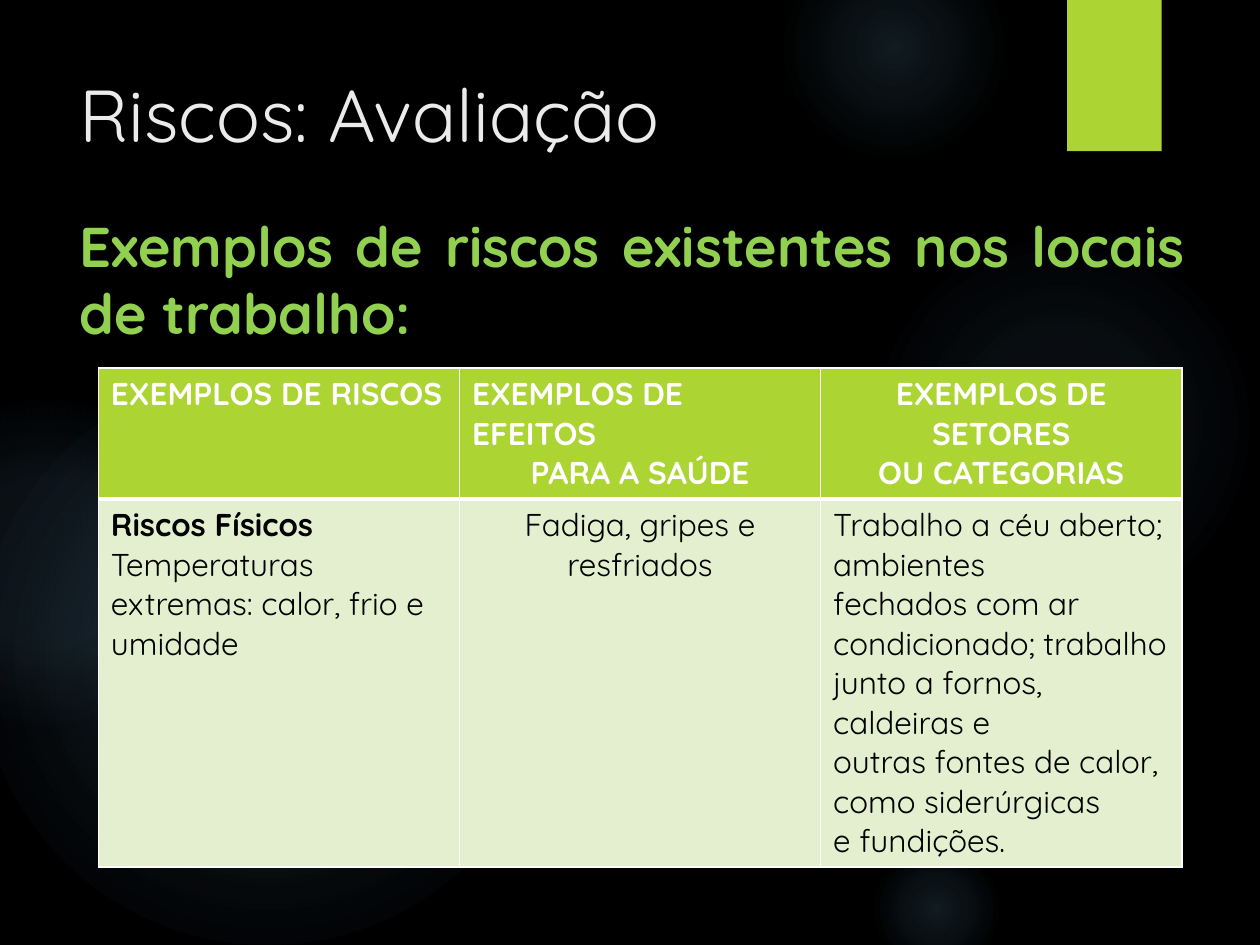
import dataclasses

import lxml.etree
import pptx
import pptx.dml.color
import pptx.enum.shapes
import pptx.enum.text
import pptx.oxml
import pptx.oxml.ns
import pptx.util

Inches = pptx.util.Inches
Pt = pptx.util.Pt
Align = pptx.enum.text.PP_ALIGN
Shape = pptx.enum.shapes.MSO_SHAPE


@dataclasses.dataclass(frozen=True)
class Theme:
    font: str = "Quicksand"
    back: str = "000000"
    glow: str = "7AC4F0"
    lime: str = "ACD433"
    pale: str = "E3EFCE"
    title: str = "EBEBEB"
    lead: str = "92D050"
    white: str = "FFFFFF"
    black: str = "000000"
    title_size: int = 42
    lead_size: int = 32
    cell_size: int = 18


THEME = Theme()

# left, top, size, then (position, opacity) stops in percent
GLOWS = [
    (6.89, 1.83, 3.08, [(0, 7), (36, 6), (69, 0)]),
    (6.22, -0.5, 1.75, [(0, 14), (36, 7), (73, 0)]),
    (6.89, 6.67, 1.08, [(0, 14), (36, 7), (66, 0)]),
    (-0.17, 2.92, 4.58, [(0, 11), (36, 10), (75, 0)]),
    (-0.92, 3.17, 2.58, [(0, 8), (36, 8), (72, 0)]),
]

# each cell is a list of (text, alignment, bold) lines
HEAD = [
    [("EXEMPLOS DE RISCOS", Align.LEFT, True)],
    [("EXEMPLOS DE EFEITOS", Align.LEFT, True),
     ("PARA A SAÚDE", Align.CENTER, True)],
    [("EXEMPLOS DE SETORES", Align.CENTER, True),
     ("OU CATEGORIAS", Align.CENTER, True)],
]
RISKS = [
    [("Riscos Físicos", Align.LEFT, True),
     ("Temperaturas extremas: calor, frio e umidade", Align.LEFT, False)],
    [("Fadiga, gripes e resfriados", Align.CENTER, False)],
    [(line, Align.LEFT, False) for line in (
        "Trabalho a céu aberto; ambientes",
        "fechados com ar condicionado; trabalho",
        "junto a fornos, caldeiras e",
        "outras fontes de calor, como siderúrgicas",
        "e fundições.")],
]


def color(code):
    return pptx.dml.color.RGBColor.from_string(code)


def write(par, text, size, code, align=Align.LEFT, bold=False):
    par.text = text
    par.alignment = align
    font = par.runs[0].font
    font.name = THEME.font
    font.size = Pt(size)
    font.bold = bold
    font.color.rgb = color(code)


def add_plain(slide, kind, box):
    shape = slide.shapes.add_shape(kind, *box)
    shape.shadow.inherit = False
    shape.line.fill.background()
    return shape


def add_glow(slide, box, stops):
    """Place a round glow that fades out from its centre."""
    shape = add_plain(slide, Shape.OVAL, box)
    marks = "".join(
        f'<a:gs pos="{pos * 1000}"><a:srgbClr val="{THEME.glow}">'
        f'<a:alpha val="{alpha * 1000}"/></a:srgbClr></a:gs>'
        for pos, alpha in stops)
    fill = pptx.oxml.parse_xml(
        f'<a:gradFill {pptx.oxml.ns.nsdecls("a")} rotWithShape="1">'
        f'<a:gsLst>{marks}</a:gsLst><a:path path="circle">'
        '<a:fillToRect l="50000" t="50000" r="50000" b="50000"/>'
        '</a:path></a:gradFill>')
    shape.element.spPr.find(pptx.oxml.ns.qn("a:prstGeom")).addnext(fill)


def add_back(slide):
    fill = slide.background.fill
    fill.solid()
    fill.fore_color.rgb = color(THEME.back)
    for left, top, size, stops in GLOWS:
        box = (Inches(left), Inches(top), Inches(size), Inches(size))
        add_glow(slide, box, stops)


def add_tab(slide, box):
    tab = add_plain(slide, Shape.RECTANGLE, box)
    tab.fill.solid()
    tab.fill.fore_color.rgb = color(THEME.lime)


def add_text(slide, box, text, size, code, **style):
    frame = slide.shapes.add_textbox(*box).text_frame
    frame.word_wrap = True
    write(frame.paragraphs[0], text, size, code, **style)


def add_edges(cell, widths):
    """Draw white cell borders; widths maps a side to points."""
    props = cell._tc.get_or_add_tcPr()
    for side in "LRTB":
        edge = lxml.etree.SubElement(
            props, pptx.oxml.ns.qn(f"a:ln{side}"), w=str(Pt(widths[side])))
        fill = lxml.etree.SubElement(edge, pptx.oxml.ns.qn("a:solidFill"))
        lxml.etree.SubElement(
            fill, pptx.oxml.ns.qn("a:srgbClr"), val=THEME.white)


def fill_row(cells, texts, back, ink, widths):
    for cell, lines in zip(cells, texts):
        add_edges(cell, widths)
        cell.fill.solid()
        cell.fill.fore_color.rgb = color(back)
        frame = cell.text_frame
        frame.text = "\n".join(text for text, _, _ in lines)
        for par, (text, align, bold) in zip(frame.paragraphs, lines):
            write(par, text, THEME.cell_size, ink, align, bold)


def add_grid(slide, box):
    left, top, width, height = box
    table = slide.shapes.add_table(2, len(HEAD), *box).table
    for col in table.columns:
        col.width = width // len(HEAD)
    table.rows[0].height = Inches(1.04)
    table.rows[1].height = height - Inches(1.04)
    thin = dict.fromkeys("LRTB", 1)
    fill_row(table.rows[0].cells, HEAD, THEME.lime, THEME.white,
             {**thin, "B": 3})
    fill_row(table.rows[1].cells, RISKS, THEME.pale, THEME.black,
             {**thin, "T": 3})


def build_slide(deck):
    slide = deck.slides.add_slide(deck.slide_layouts[6])
    add_back(slide)
    add_tab(slide, (Inches(8.47), 0, Inches(0.75), Inches(1.2)))
    left = Inches(0.53)
    add_text(slide, (left, Inches(0.5), Inches(7.72), Inches(1.53)),
             "Riscos: Avaliação", THEME.title_size, THEME.title)
    add_text(slide, (left, Inches(1.63), Inches(8.98), Inches(1.2)),
             "Exemplos de riscos existentes nos locais de trabalho:",
             THEME.lead_size, THEME.lead, align=Align.JUSTIFY, bold=True)
    add_grid(slide, (Inches(0.78), Inches(2.92), Inches(8.6), Inches(3.96)))


def main():
    deck = pptx.Presentation()
    deck.slide_width = Inches(10)
    deck.slide_height = Inches(7.5)
    build_slide(deck)
    deck.save("out.pptx")


if __name__ == "__main__":
    main()
